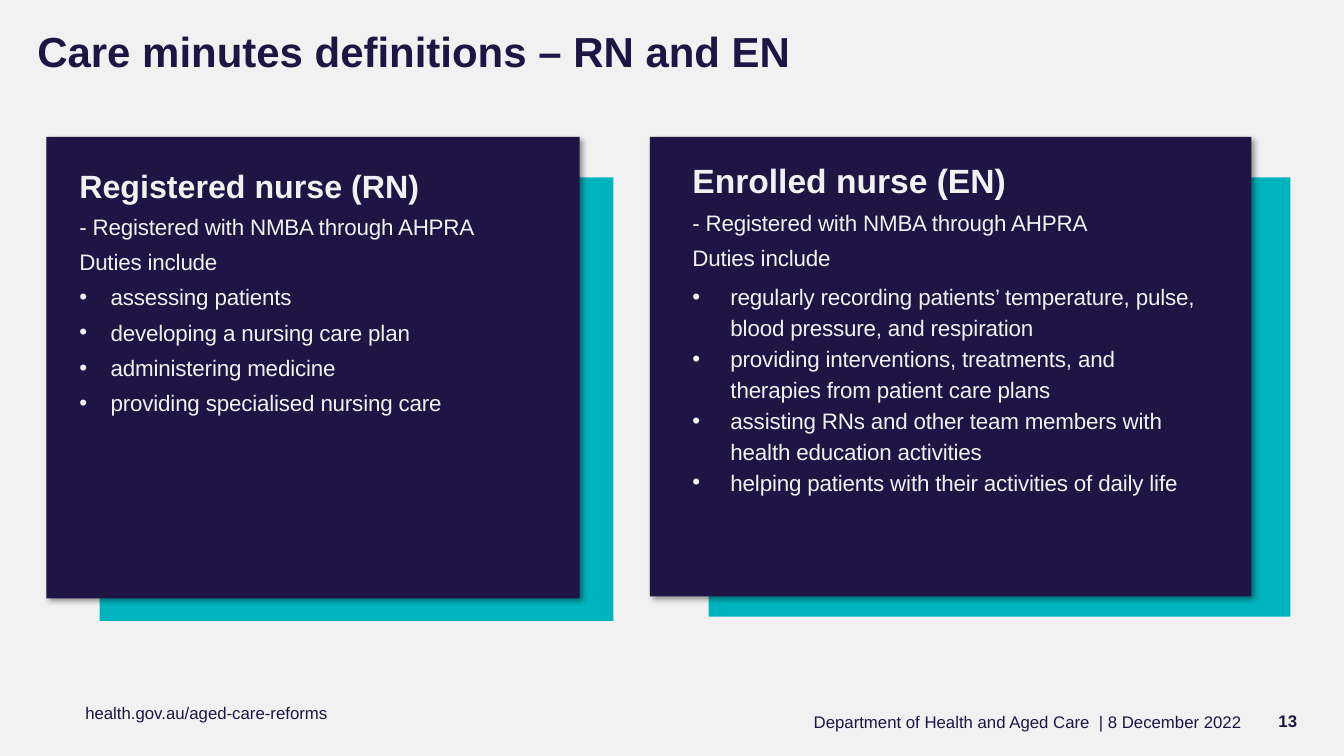
from lxml import etree
from pptx import Presentation
from pptx.dml.color import RGBColor
from pptx.enum.shapes import MSO_SHAPE
from pptx.enum.text import MSO_ANCHOR, PP_ALIGN
from pptx.oxml.ns import qn
from pptx.util import Cm, Pt

RECTANGLE = MSO_SHAPE.RECTANGLE
TOP, MIDDLE = MSO_ANCHOR.TOP, MSO_ANCHOR.MIDDLE
LEFT, RIGHT = PP_ALIGN.LEFT, PP_ALIGN.RIGHT
NAVY, TEAL, PALE = "1E1545", "00B4BE", "F2F1F2"
FONT = "Arial"

# Boxes are left, top, width, height in centimetres.
CARDS = [
    {
        "back": (17.86, 4.47, 14.66, 11.07),
        "front": (16.38, 3.45, 15.16, 11.58),
        "text_inset": (0.82, 0.36),
        "text_size": (13.26, 8.84),
        "heading": "Enrolled nurse (EN)",
        "heading_size": 24,
        "duties": [
            "regularly recording patients’ temperature, pulse, blood pressure, and respiration",
            "providing interventions, treatments, and therapies from patient care plans",
            "assisting RNs and other team members with health education activities",
            "helping patients with their activities of daily life",
        ],
        "indent": 0.96,
        "duty_format": {"line_spacing": 1.15, "space_after": Pt(0)},
    },
    {
        "back": (2.51, 4.47, 12.95, 11.18),
        "front": (1.17, 3.45, 13.44, 11.63),
        "text_inset": (0.58, 0.51),
        "text_size": (12.27, 7.7),
        "heading": "Registered nurse (RN)",
        "heading_size": 23,
        "duties": [
            "assessing patients",
            "developing a nursing care plan",
            "administering medicine",
            "providing specialised nursing care",
        ],
        "indent": 0.79,
        "duty_format": {"space_after": Pt(6)},
    },
]
CARD_INTRO = ["- Registered with NMBA through AHPRA", "Duties include"]


def colour(value):
    return RGBColor.from_string(value)


def apply_format(target, values):
    for name, value in values.items():
        setattr(target, name, value)


def add_text_box(page, box, anchor=TOP):
    frame = page.shapes.add_textbox(*map(Cm, box)).text_frame
    apply_format(frame, {"word_wrap": True, "vertical_anchor": anchor})
    return frame


def add_span(para, text, size, fill, bold=False, spacing=0):
    """Add a run; spacing is in hundredths of a point."""
    span = para.add_run()
    span.text = text
    apply_format(span.font, {"name": FONT, "size": Pt(size), "bold": bold})
    span.font.color.rgb = colour(fill)
    if spacing:
        span.font._element.set("spc", str(spacing))


def add_bullet(para, indent):
    properties = para._p.get_or_add_pPr()
    properties.set("marL", str(Cm(indent)))
    properties.set("indent", str(-Cm(indent)))
    etree.SubElement(properties, qn("a:buFont"), typeface=FONT)
    etree.SubElement(properties, qn("a:buChar"), char="•")


def add_soft_shadow(shape):
    effects = shape._element.spPr.find(qn("a:effectLst"))
    shadow = etree.SubElement(
        effects, qn("a:outerShdw"), blurRad=str(Pt(4)), dist=str(Pt(3)),
        dir="2700000", algn="tl", rotWithShape="0")
    tint = etree.SubElement(shadow, qn("a:srgbClr"), val="000000")
    etree.SubElement(tint, qn("a:alpha"), val="40000")


def add_panel(page, box, fill):
    panel = page.shapes.add_shape(RECTANGLE, *map(Cm, box))
    panel.shadow.inherit = False
    panel.fill.solid()
    panel.fill.fore_color.rgb = colour(fill)
    panel.line.fill.background()
    return panel


def add_card(page, card):
    add_panel(page, card["back"], TEAL)
    add_soft_shadow(add_panel(page, card["front"], NAVY))

    left, top = card["front"][:2]
    inset_x, inset_y = card["text_inset"]
    frame = add_text_box(page, (left + inset_x, top + inset_y, *card["text_size"]))

    heading = frame.paragraphs[0]
    apply_format(heading, {"line_spacing": 1.1, "space_after": Pt(6)})
    add_span(heading, card["heading"], card["heading_size"], PALE, bold=True)

    for text in CARD_INTRO:
        para = frame.add_paragraph()
        para.space_after = Pt(6)
        add_span(para, text, 16, PALE, spacing=-10)
    for text in card["duties"]:
        para = frame.add_paragraph()
        apply_format(para, card["duty_format"])
        add_bullet(para, card["indent"])
        add_span(para, text, 16, PALE, spacing=-10)


def add_title(page, box):
    para = add_text_box(page, box, MIDDLE).paragraphs[0]
    para.line_spacing = 0.9
    add_span(para, "Care minutes definitions – RN and EN", 30, NAVY, bold=True)


def add_footer(page, top):
    """Place the web address, department line and page number around one height."""
    items = [
        ((1.9, top - 0.07, 7.26, 0.76), TOP, LEFT, False,
         "health.gov.au/aged-care-reforms"),
        ((15.52, top, 16.03, 1.09), MIDDLE, RIGHT, False,
         "Department of Health and Aged Care  | 8 December 2022"),
        ((31.8, top, 1.14, 1.02), MIDDLE, RIGHT, True, "13"),
    ]
    for box, anchor, alignment, bold, text in items:
        para = add_text_box(page, box, anchor).paragraphs[0]
        para.alignment = alignment
        add_span(para, text, 12, NAVY, bold)


def main():
    deck = Presentation()
    apply_format(deck, {"slide_width": Cm(33.87), "slide_height": Cm(19.05)})
    page = deck.slides.add_slide(deck.slide_layouts[6])
    page.background.fill.solid()
    page.background.fill.fore_color.rgb = colour(PALE)

    add_title(page, (0.69, 0.61, 22.56, 1.52))
    add_footer(page, 17.65)
    for card in CARDS:
        add_card(page, card)
    deck.save("out.pptx")


if __name__ == "__main__":
    main()
